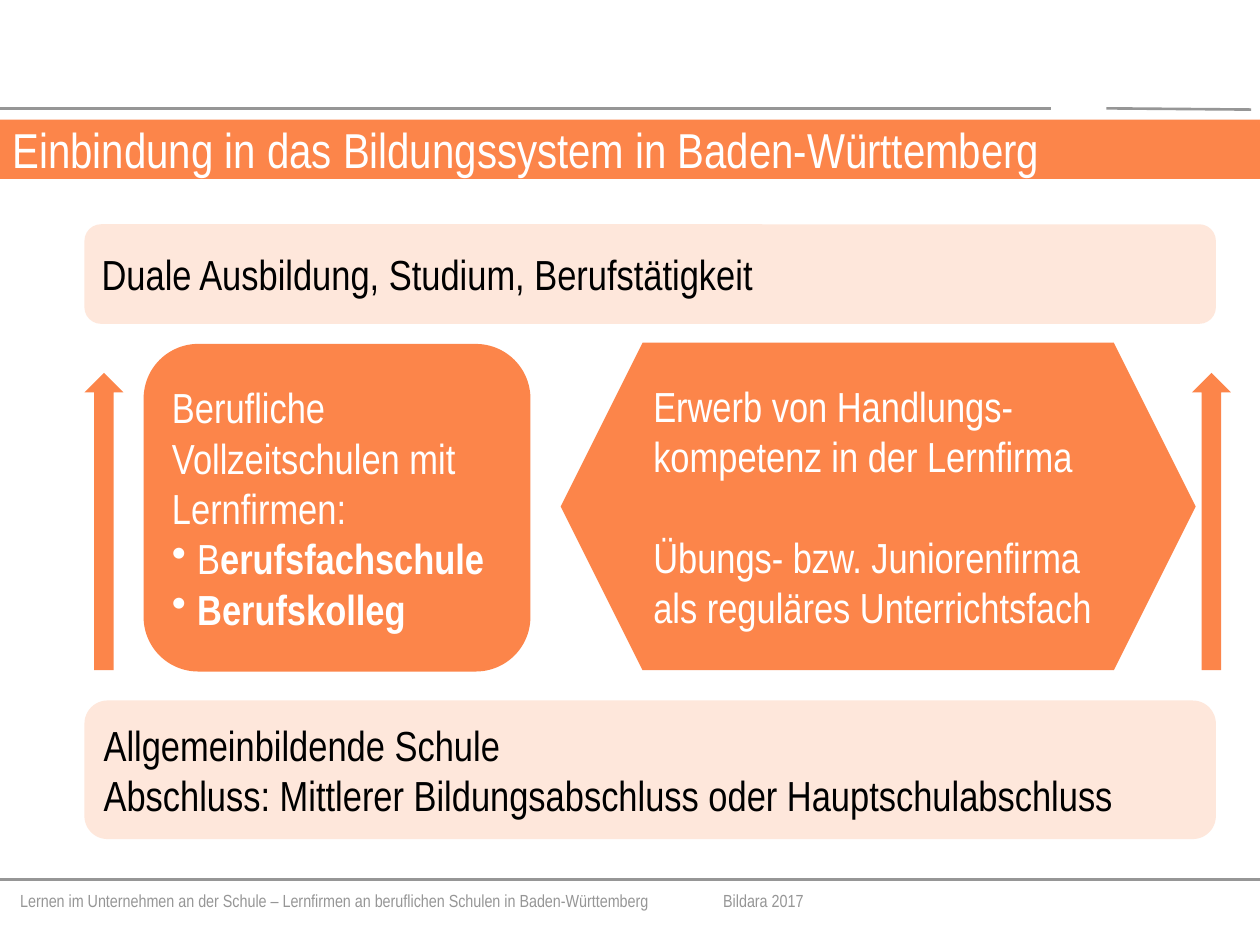
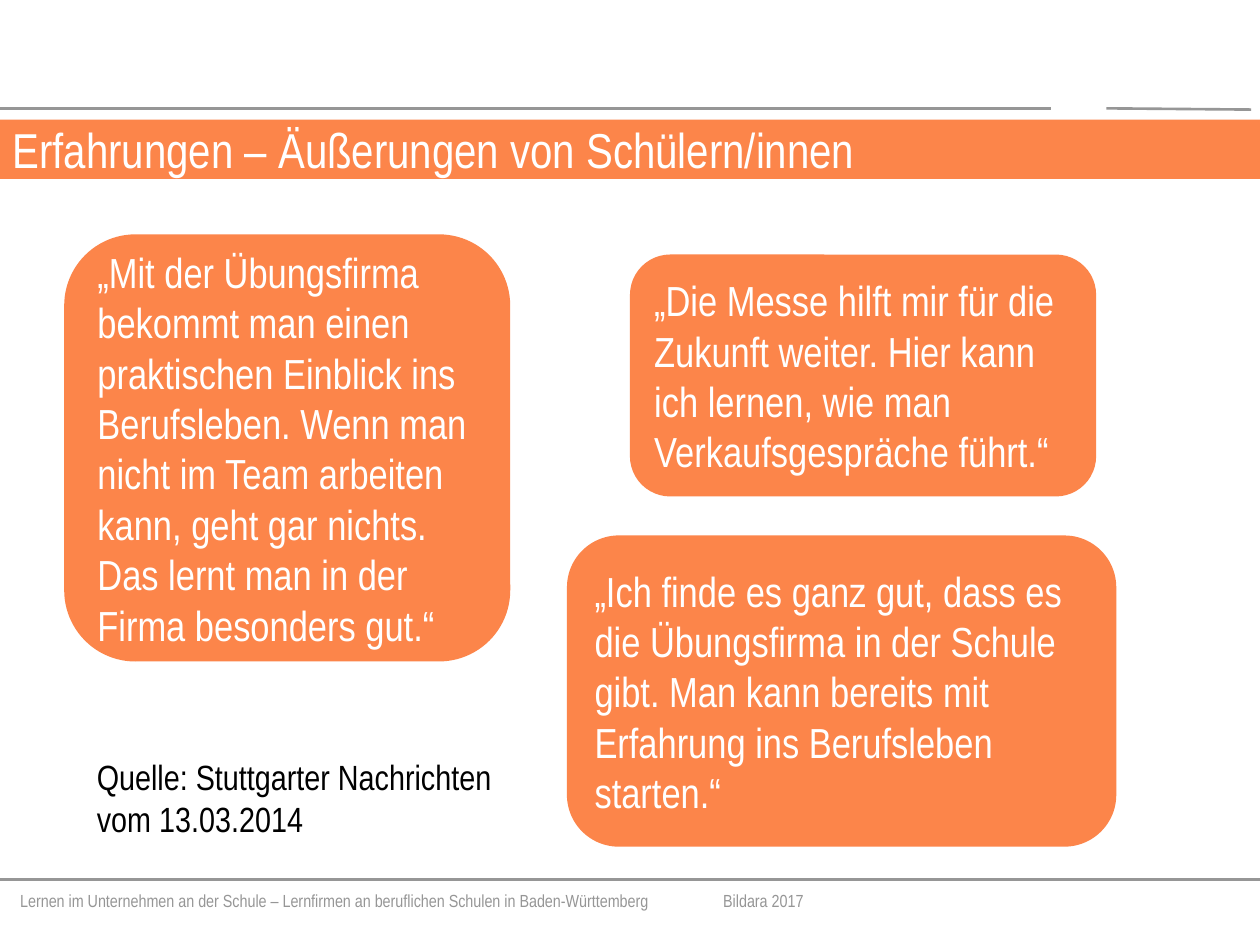
from lxml import etree
from pptx import Presentation
from pptx.dml.color import RGBColor
from pptx.enum.shapes import MSO_CONNECTOR, MSO_SHAPE
from pptx.enum.text import MSO_ANCHOR, MSO_AUTO_SIZE, PP_ALIGN
from pptx.oxml.ns import qn
from pptx.util import Inches, Pt

ORANGE = RGBColor(0xFC, 0x85, 0x4A)
PALE_ORANGE = RGBColor(0xFE, 0xE7, 0xDB)
GRAY = RGBColor(0x96, 0x96, 0x96)
WHITE = RGBColor(0xFF, 0xFF, 0xFF)
BLACK = RGBColor(0, 0, 0)
FONT = "Arial Narrow"
TITLE_ONLY = 5

STRAIGHT = MSO_CONNECTOR.STRAIGHT
ROUNDED = MSO_SHAPE.ROUNDED_RECTANGLE
HEXAGON = MSO_SHAPE.HEXAGON
UP_ARROW = MSO_SHAPE.UP_ARROW
MIDDLE = MSO_ANCHOR.MIDDLE
LEFT = PP_ALIGN.LEFT
NO_AUTOFIT = MSO_AUTO_SIZE.NONE

FOOTER = "Lernen im Unternehmen an der Schule – Lernfirmen an beruflichen Schulen in Baden-Württemberg\tBildara 2017"
FOOTER_TAB = Inches(5.58)
RULES = [(0, 6.98, 10, 6.98), (0, 0.86, 8.34, 0.86), (8.78, 0.86, 9.93, 0.87)]


def format_paragraph(paragraph, size, color):
    paragraph.alignment = LEFT
    paragraph.font.name = FONT
    paragraph.font.size = Pt(size)
    paragraph.font.color.rgb = color


def add_rule(slide, x1, y1, x2, y2):
    rule = slide.shapes.add_connector(
        STRAIGHT, Inches(x1), Inches(y1), Inches(x2), Inches(y2))
    rule.line.color.rgb = GRAY
    rule.line.width = Pt(1.5)
    etree.SubElement(rule._element.spPr, qn("a:effectLst"))


def add_text(slide, box, text, size, color):
    textbox = slide.shapes.add_textbox(*map(Inches, box))
    frame = textbox.text_frame
    frame.word_wrap = True
    frame.text = text
    format_paragraph(frame.paragraphs[0], size, color)
    return frame


def add_footer(slide):
    frame = add_text(slide, (0.16, 7.06, 8.62, 0.17), "", 10, GRAY)
    frame.margin_left = frame.margin_right = 0
    frame.margin_top = frame.margin_bottom = 0
    paragraph = frame.paragraphs[0]
    properties = paragraph._p.get_or_add_pPr()
    tabs = etree.Element(qn("a:tabLst"))
    etree.SubElement(tabs, qn("a:tab"), pos=str(FOOTER_TAB), algn="l")
    properties.insert(0, tabs)
    paragraph.text = FOOTER


def add_title(slide, text):
    title = slide.shapes.title
    title.left, title.top = Inches(0), Inches(0.95)
    title.width, title.height = Inches(10), Inches(0.47)
    title.fill.solid()
    title.fill.fore_color.rgb = ORANGE
    frame = title.text_frame
    frame.text = text
    frame.auto_size = NO_AUTOFIT
    frame.vertical_anchor = MIDDLE
    format_paragraph(frame.paragraphs[0], 28, WHITE)


def add_slide(presentation, title):
    slide = presentation.slides.add_slide(presentation.slide_layouts[TITLE_ONLY])
    add_footer(slide)
    for rule in RULES:
        add_rule(slide, *rule)
    add_title(slide, title)
    return slide


def add_panel(slide, kind, box, fill=ORANGE):
    shape = slide.shapes.add_shape(kind, *map(Inches, box))
    shape.shadow.inherit = False
    shape.fill.solid()
    shape.fill.fore_color.rgb = fill
    shape.line.fill.background()
    return shape


def add_text_panel(slide, kind, box, lines, fill=ORANGE, color=WHITE):
    frame = add_panel(slide, kind, box, fill).text_frame
    frame.word_wrap = True
    frame.vertical_anchor = MIDDLE
    frame.text = "\n".join(lines)
    for paragraph in frame.paragraphs:
        format_paragraph(paragraph, 24, color)
    return frame


def add_bullet(frame, plain, bold):
    paragraph = frame.add_paragraph()
    properties = paragraph._p.get_or_add_pPr()
    indent = Inches(0.2)
    properties.set("marL", str(indent))
    properties.set("indent", str(-indent))
    etree.SubElement(properties, qn("a:buChar"), char="•")
    format_paragraph(paragraph, 24, WHITE)
    if plain:
        paragraph.add_run().text = plain
    run = paragraph.add_run()
    run.text = bold
    run.font.bold = True


def build_education_slide(presentation):
    slide = add_slide(presentation, "Einbindung in das Bildungssystem in Baden-Württemberg")
    add_text_panel(slide, ROUNDED, (0.67, 5.56, 8.98, 1.1),
                   ["Allgemeinbildende Schule",
                    "Abschluss: Mittlerer Bildungsabschluss oder Hauptschulabschluss"],
                   PALE_ORANGE, BLACK)
    add_text_panel(slide, ROUNDED, (0.67, 1.78, 8.98, 0.79),
                   ["Duale Ausbildung, Studium, Berufstätigkeit"],
                   PALE_ORANGE, BLACK)
    schools = add_text_panel(slide, ROUNDED, (1.14, 2.73, 3.07, 2.6),
                             ["Berufliche Vollzeitschulen mit Lernfirmen:"])
    add_bullet(schools, "B", "erufsfachschule")
    add_bullet(schools, "", "Berufskolleg")
    for left in (0.67, 9.46):
        add_panel(slide, UP_ARROW, (left, 2.96, 0.31, 2.36))
    skills = add_text_panel(slide, HEXAGON, (4.45, 2.72, 5.04, 2.6),
                            ["Erwerb von Handlungs-kompetenz in der Lernfirma",
                             "Übungs- bzw. Juniorenfirma als reguläres Unterrichtsfach"])
    skills.paragraphs[1].space_before = Pt(28.7)


def build_quotes_slide(presentation):
    slide = add_slide(presentation, "Erfahrungen – Äußerungen von Schülern/innen")
    quotes = [
        ((0.51, 1.86, 3.54, 3.39),
         "„Mit der Übungsfirma bekommt man einen praktischen Einblick ins Berufsleben. "
         "Wenn man nicht im Team arbeiten kann, geht gar nichts. "
         "Das lernt man in der Firma besonders gut.“"),
        ((5, 2.02, 3.7, 1.92),
         "„Die Messe hilft mir für die Zukunft weiter. "
         "Hier kann ich lernen, wie man Verkaufsgespräche führt.“"),
        ((4.5, 4.25, 4.36, 2.47),
         "„Ich finde es ganz gut, dass es die Übungsfirma in der Schule gibt. "
         "Man kann bereits mit Erfahrung ins Berufsleben starten.“"),
    ]
    for box, quote in quotes:
        add_text_panel(slide, ROUNDED, box, [quote])
    add_text(slide, (0.67, 5.95, 3.39, 0.77),
             "Quelle: Stuttgarter Nachrichten vom 13.03.2014", 20, BLACK)


def main():
    presentation = Presentation()
    presentation.slide_width = Inches(10)
    presentation.slide_height = Inches(7.5)
    build_education_slide(presentation)
    build_quotes_slide(presentation)
    presentation.save("out.pptx")


if __name__ == "__main__":
    main()
